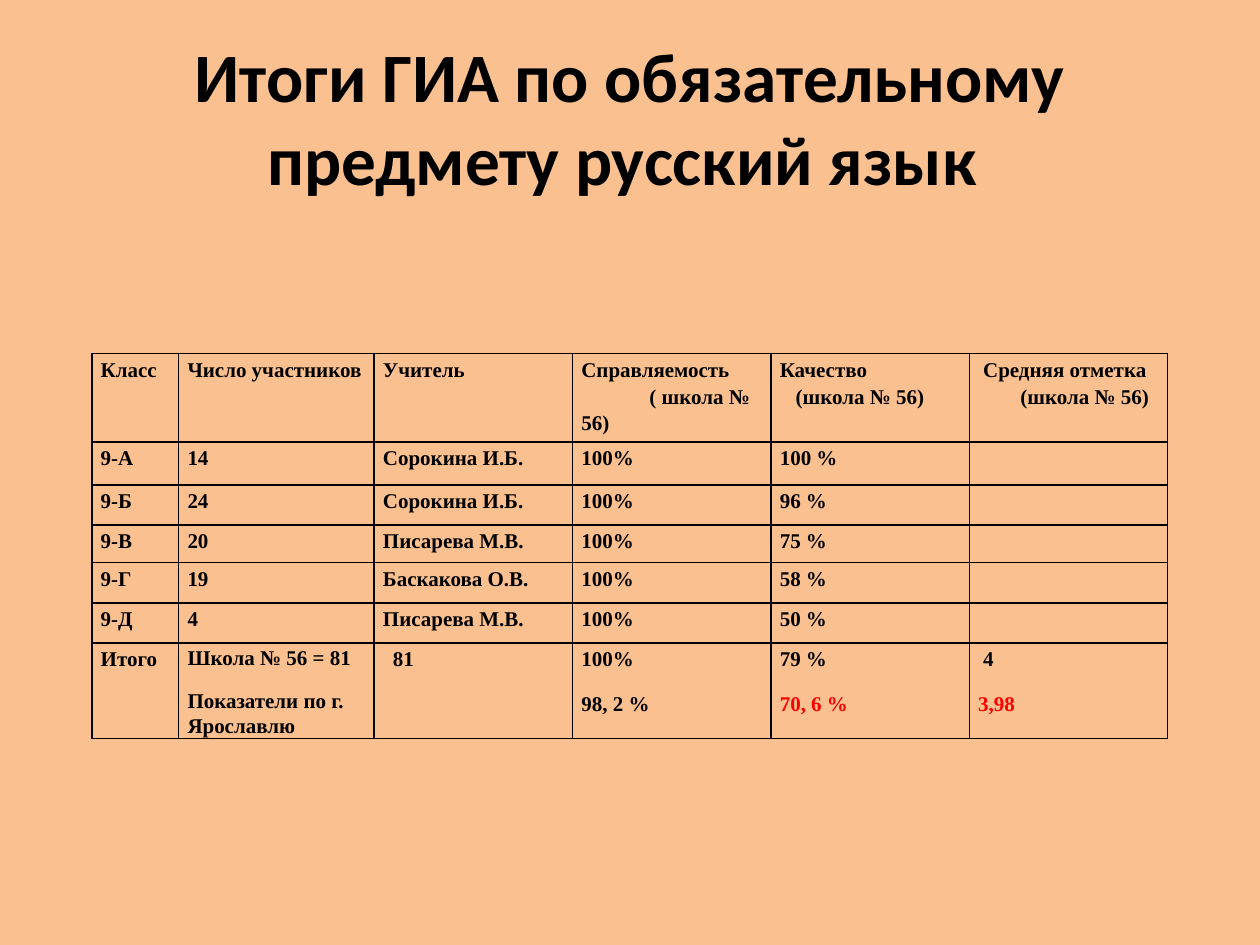
from lxml import etree
from pptx import Presentation
from pptx.dml.color import RGBColor
from pptx.enum import text
from pptx.oxml import ns
from pptx.util import Cm, Pt

PEACH = RGBColor(0xFA, 0xC0, 0x90)
BLACK = RGBColor(0, 0, 0)
RED = RGBColor(0xFF, 0, 0)

HEADER = [
    [("Класс",)],
    [("Число участников",)],
    [("Учитель",)],
    [("Справляемость",), ("( школа № 56)", 1.37)],
    [("Качество",), ("(школа № 56)", 0.32)],
    [("Средняя отметка", 0.1), ("(школа № 56)", 0.85)],
]
CLASSES = [
    ("9-А", "14", "Сорокина И.Б.", "100%", "100 %", ""),
    ("9-Б", "24", "Сорокина И.Б.", "100%", "96 %", ""),
    ("9-В", "20", "Писарева М.В.", "100%", "75 %", ""),
    ("9-Г", "19", "Баскакова О.В.", "100%", "58 %", ""),
    ("9-Д", "4", "Писарева М.В.", "100%", "50 %", ""),
]
TOTAL = [
    [("Итого",)],
    [("Школа № 56 = 81",), ("Показатели по г. Ярославлю",)],
    [("81", 0.2)],
    [("100%",), ("98, 2 %",)],
    [("79 %",), ("70, 6 %", 0, RED)],
    [("4", 0.1), ("3,98", 0, RED)],
]
ROWS = [HEADER] + [[[(value,)] for value in row] for row in CLASSES] + [TOTAL]
COL_WIDTHS = [1.75, 3.94, 4, 4, 4, 4]
ROW_HEIGHTS = [1.65, 0.86, 0.81, 0.76, 0.81, 0.81, 1.91]


def style_run(r, font, size, color):
    r.font.name = font
    r.font.size = Pt(size)
    r.font.bold = True
    r.font.color.rgb = color


def add_borders(cell):
    tc_pr = cell._tc.get_or_add_tcPr()
    for side in ("lnL", "lnR", "lnT", "lnB"):
        ln = etree.SubElement(tc_pr, ns.qn("a:" + side), w=str(Pt(1)))
        fill = etree.SubElement(ln, ns.qn("a:solidFill"))
        etree.SubElement(fill, ns.qn("a:srgbClr"), val=str(BLACK))


prs = Presentation()
prs.slide_width = Cm(25.4)
prs.slide_height = Cm(19.05)
s = prs.slides.add_slide(prs.slide_layouts[6])
s.background.fill.solid()
s.background.fill.fore_color.rgb = PEACH

title = s.shapes.add_textbox(Cm(1.27), Cm(0.76), Cm(22.86), Cm(3.18))
tf = title.text_frame
tf.word_wrap = True
tf.vertical_anchor = text.MSO_ANCHOR.MIDDLE
tf.text = "Итоги ГИА по обязательному предмету русский язык "
p = tf.paragraphs[0]
p.alignment = text.PP_ALIGN.CENTER
style_run(p.runs[0], "Calibri", 39.6, BLACK)

frame = s.shapes.add_table(len(ROWS), len(COL_WIDTHS), Cm(1.85), Cm(7.13),
                           Cm(sum(COL_WIDTHS)), Cm(sum(ROW_HEIGHTS)))
table = frame.table
table.first_row = False
table.horz_banding = False
for col, width in zip(table.columns, COL_WIDTHS):
    col.width = Cm(width)
for row, height in zip(table.rows, ROW_HEIGHTS):
    row.height = Cm(height)

for i, row in enumerate(ROWS):
    for j, lines in enumerate(row):
        cell = table.cell(i, j)
        add_borders(cell)
        cell.fill.background()
        cell.margin_left = cell.margin_right = Cm(0.18)
        cell.margin_top = Cm(0.03)
        cell.margin_bottom = Cm(0)
        tf = cell.text_frame
        tf.text = "\n".join(line[0] for line in lines)
        for k, (p, line) in enumerate(zip(tf.paragraphs, lines)):
            value, indent, color = (line + (0, BLACK)[len(line) - 1:])
            p.line_spacing = Pt(14.5) if row is TOTAL and j == 1 else 1.15
            joined = row is HEADER and k < len(lines) - 1
            p.space_after = Pt(0 if joined else 10)
            if indent:
                p._p.get_or_add_pPr().set("indent", str(Cm(indent)))
            for r in p.runs:
                style_run(r, "Times New Roman", 12, color)
            if not value:
                etree.SubElement(p._p, ns.qn("a:endParaRPr"), sz="1200")

prs.save("out.pptx")
